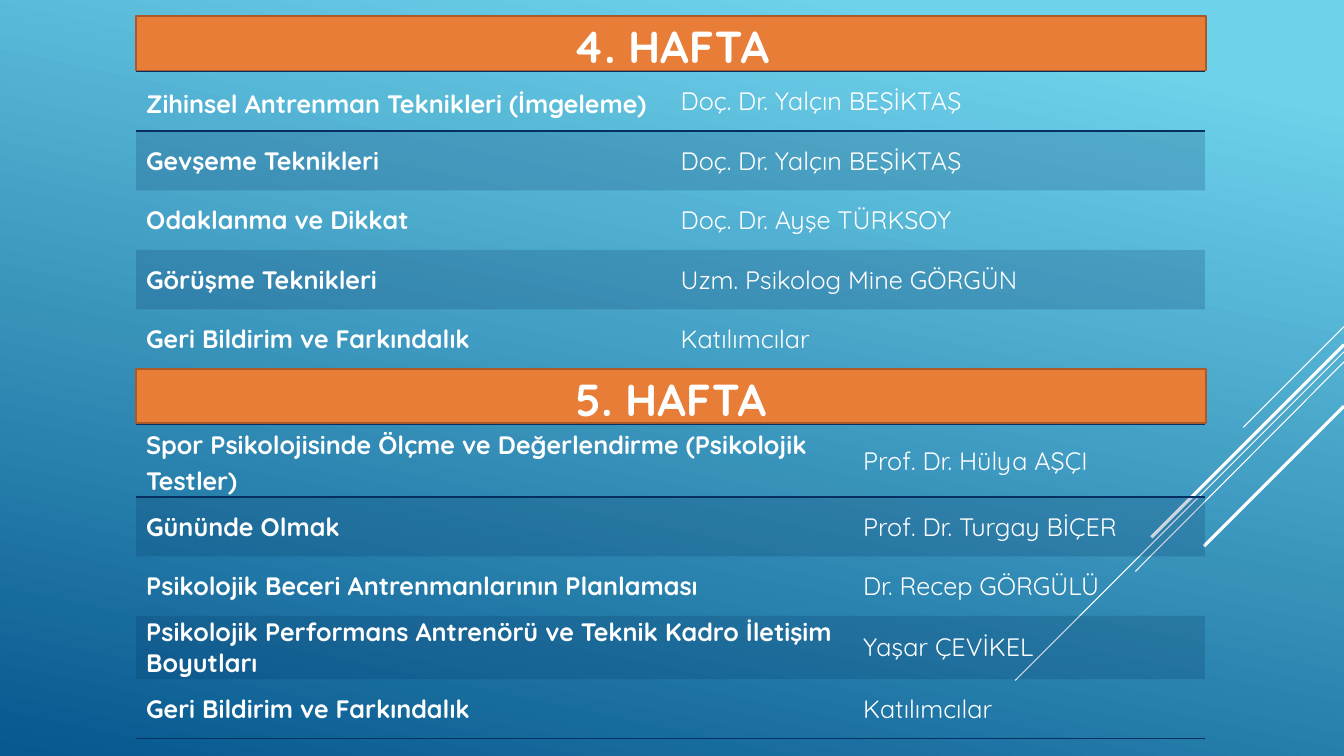
"""Build the slide with the programme of weeks four and five."""
from lxml import etree
from pptx import Presentation
from pptx import util as u
from pptx.dml.color import RGBColor
from pptx.enum import shapes, text
from pptx.oxml import parse_xml
from pptx.oxml.ns import nsdecls, qn

HUES = {"sky": "6ED2EB", "sea": "06588E", "white": "FFFFFF",
        "navy": "052F61", "orange": "E87D37", "rust": "AC5929"}
PLAIN = "{2D5ABB26-0587-4C30-8999-92F81FD0307C}"
LEFT, WIDTH, ROW = 1.35, 10.61, 0.59

RAYS = [
    (3.24, 12.33, 4.24, 0.75),
    (3.49, 10.07, 6.75, 0.75),
    (3.59, 11.26, 5.67, 0.75),
    (3.42, 11.42, 5.33, 2.25),
    (4.03, 11.94, 5.42, 2.25),
]
WEEKS = [
    ("4. HAFTA", 0.16, 0.71, (5.3, 5.3), [
        ("Zihinsel Antrenman Teknikleri (İmgeleme)", "Doç. Dr. Yalçın BEŞİKTAŞ"),
        ("Gevşeme Teknikleri", "Doç. Dr. Yalçın BEŞİKTAŞ"),
        ("Odaklanma ve Dikkat", "Doç. Dr. Ayşe TÜRKSOY"),
        ("Görüşme Teknikleri", "Uzm. Psikolog Mine GÖRGÜN"),
        ("Geri Bildirim ve Farkındalık", "Katılımcılar"),
    ]),
    ("5. HAFTA", 3.66, 4.21, (7.11, 3.49), [
        ("Spor Psikolojisinde Ölçme ve Değerlendirme (Psikolojik Testler)",
         "Prof. Dr. Hülya AŞÇI"),
        ("Gününde Olmak", "Prof. Dr. Turgay BİÇER"),
        ("Psikolojik Beceri Antrenmanlarının Planlaması", "Dr. Recep GÖRGÜLÜ"),
        ("Psikolojik Performans Antrenörü ve Teknik Kadro İletişim Boyutları",
         "Yaşar ÇEVİKEL"),
        ("Geri Bildirim ve Farkındalık", "Katılımcılar"),
    ]),
]


def style(para, size, bold):
    font = para.runs[0].font
    font.name, font.size, font.bold = "Quicksand", u.Pt(size), bold
    font.color.rgb = RGBColor.from_string(HUES["white"])


def border(cell, side):
    cell._tc.get_or_add_tcPr().insert(0, parse_xml(
        f'<a:{side} {nsdecls("a")} w="12700"><a:solidFill>'
        f'<a:srgbClr val="{HUES["navy"]}"/></a:solidFill></a:{side}>'))


deck = Presentation()
deck.slide_width, deck.slide_height = u.Inches(13.33), u.Inches(7.5)
slide = deck.slides.add_slide(deck.slide_layouts[6])

back = slide.background.fill
back.gradient()
back.gradient_angle = 258
for stop, hue, place in zip(back.gradient_stops, ("sky", "sea"), (0.1, 1)):
    stop.color.rgb = RGBColor.from_string(HUES[hue])
    stop.position = place

for top, end, low, weight in RAYS:
    ray = slide.shapes.add_connector(
        shapes.MSO_CONNECTOR.STRAIGHT, u.Inches(13.33), u.Inches(top),
        u.Inches(end), u.Inches(low))
    ray.line.color.rgb = RGBColor.from_string(HUES["white"])
    ray.line.width = u.Pt(weight)
    etree.SubElement(ray._element.spPr, qn("a:effectLst"))

for title, head, top, cols, rows in WEEKS:
    table = slide.shapes.add_table(
        len(rows), len(cols), u.Inches(LEFT), u.Inches(top),
        u.Inches(WIDTH), u.Inches(ROW * len(rows))).table
    table.first_row = table.horz_banding = False
    table._tbl.tblPr.find(qn("a:tableStyleId")).text = PLAIN
    for col, width in zip(table.columns, cols):
        col.width = u.Inches(width)
    for r, row in enumerate(rows):
        for c, words in enumerate(row):
            cell = table.cell(r, c)
            cell.text_frame.text = words
            cell.vertical_anchor = text.MSO_ANCHOR.MIDDLE
            cell.margin_top = cell.margin_bottom = 0
            para = cell.text_frame.paragraphs[0]
            style(para, 18, c == 0)
            if r == c == 0:
                para.line_spacing = 1.15
                para.space_after = u.Pt(10)
            if r % 2:
                cell.fill.solid()
                cell.fill.fore_color.rgb = RGBColor.from_string(HUES["navy"])
                tint = cell._tc.tcPr.find(".//" + qn("a:srgbClr"))
                etree.SubElement(tint, qn("a:alpha"), val="20000")
            else:
                cell.fill.background()
            if r in (0, len(rows) - 1):
                border(cell, "lnB")
            if r == 0:
                border(cell, "lnT")

    bar = slide.shapes.add_shape(
        shapes.MSO_SHAPE.RECTANGLE, u.Inches(LEFT), u.Inches(head),
        u.Inches(WIDTH), u.Inches(0.54))
    bar.shadow.inherit = False
    bar.fill.solid()
    bar.fill.fore_color.rgb = RGBColor.from_string(HUES["orange"])
    bar.line.color.rgb = RGBColor.from_string(HUES["rust"])
    bar.line.width = u.Pt(1.25)
    bar.text_frame.text = title
    bar.text_frame.vertical_anchor = text.MSO_ANCHOR.MIDDLE
    para = bar.text_frame.paragraphs[0]
    para.alignment = text.PP_ALIGN.CENTER
    para.line_spacing = 1.1
    style(para, 32, True)

deck.save("out.pptx")
